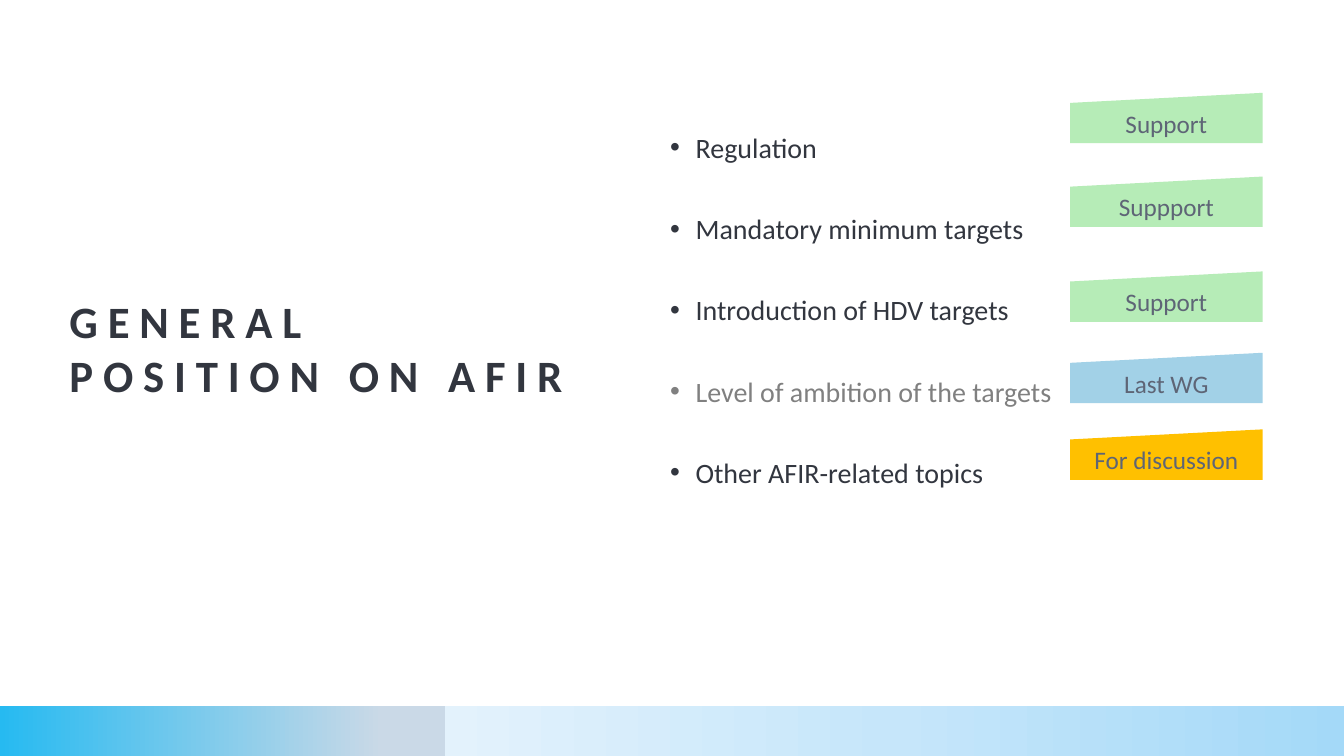
from lxml.etree import SubElement
from pptx import Presentation
from pptx.dml.color import RGBColor
from pptx.enum.shapes import MSO_SHAPE
from pptx.enum.text import MSO_ANCHOR, PP_ALIGN
from pptx.oxml.ns import qn
from pptx.util import Cm, Pt

COLORS = {
    "ink": "32363F", "muted": "808080", "label": "5E6576",
    "green": "B6ECB7", "blue": "A2D1E7", "amber": "FFC000",
    "cyan": "26BAF1", "steel": "CAD9E7",
    "ice": "E3F2FC", "pale": "C6E6FA", "sky": "A4D9F8",
}


class PositionSlide:
    """Draws the parts of the slide in one shared style."""

    font_name = "Calibri"

    def __init__(self, slide):
        self.slide = slide

    def style(self, paragraph, size, color, bold=False):
        font = paragraph.font
        font.name, font.size, font.bold = self.font_name, Pt(size), bold
        font.color.rgb = RGBColor.from_string(COLORS[color])

    def shape(self, preset, left, top, width, height):
        shape = self.slide.shapes.add_shape(preset, Cm(left), Cm(top), Cm(width), Cm(height))
        shape.shadow.inherit = False
        shape.line.fill.background()
        return shape

    def text_frame(self, left, top, width, height, anchor):
        frame = self.slide.shapes.add_textbox(Cm(left), Cm(top), Cm(width), Cm(height)).text_frame
        frame.word_wrap = True
        frame.vertical_anchor = anchor
        frame.margin_left = frame.margin_right = frame.margin_top = frame.margin_bottom = 0
        return frame

    def band(self, left, width, stops):
        band = self.shape(MSO_SHAPE.RECTANGLE, left, 17.8, width, 1.27)
        band.fill.gradient()
        band.fill.gradient_angle = 0
        stop_list = next(band._element.iter(qn("a:gsLst")))
        for stop in list(stop_list):
            stop_list.remove(stop)
        for percent, color in stops:
            stop = SubElement(stop_list, qn("a:gs"), pos=str(percent * 1000))
            SubElement(stop, qn("a:srgbClr"), val=COLORS[color])

    def title(self, text):
        heading = self.text_frame(1.75, 4.85, 12.75, 5.26, MSO_ANCHOR.BOTTOM).paragraphs[0]
        run = heading.add_run()
        run.text = text
        run._r.get_or_add_rPr().set("spc", "700")
        self.style(heading, 32, "ink", bold=True)

    def topics(self, topics):
        frame = self.text_frame(16.89, 2.44, 14.94, 13.54, MSO_ANCHOR.TOP)
        for index, (text, color) in enumerate(topics):
            topic = frame.add_paragraph() if index else frame.paragraphs[0]
            topic.text = text
            topic.line_spacing = 2.0
            topic.space_before = Pt(10)
            properties = topic._p.get_or_add_pPr()
            properties.set("marL", str(Cm(0.64)))
            properties.set("indent", str(-Cm(0.64)))
            SubElement(properties, qn("a:buFont"), typeface="Arial")
            SubElement(properties, qn("a:buChar"), char="•")
            self.style(topic, 20, color)

    def status(self, text, top, color):
        badge = self.shape(MSO_SHAPE.FLOWCHART_MANUAL_INPUT, 26.97, top, 4.85, 1.27)
        badge.fill.solid()
        badge.fill.fore_color.rgb = RGBColor.from_string(COLORS[color])
        frame = badge.text_frame
        frame.word_wrap = True
        frame.vertical_anchor = MSO_ANCHOR.MIDDLE
        label = frame.paragraphs[0]
        label.text = text
        label.alignment = PP_ALIGN.CENTER
        self.style(label, 18, "label")


def main():
    presentation = Presentation()
    presentation.slide_width, presentation.slide_height = Cm(33.87), Cm(19.05)
    page = PositionSlide(presentation.slides.add_slide(presentation.slide_layouts[6]))

    page.band(0, 11.22, [(0, "cyan"), (86, "steel"), (100, "steel")])
    page.band(11.22, 22.65, [(0, "ice"), (50, "pale"), (100, "sky")])
    page.title("GENERAL POSITION ON AFIR")
    page.topics([
        ("Regulation", "ink"),
        ("Mandatory minimum targets", "ink"),
        ("Introduction of HDV targets", "ink"),
        ("Level of ambition of the targets", "muted"),
        ("Other AFIR-related topics", "ink"),
    ])
    for text, top, color in [
        ("Support", 2.34, "green"),
        ("Suppport", 4.45, "green"),
        ("Support", 6.84, "green"),
        ("Last WG", 8.89, "blue"),
        ("For discussion", 10.82, "amber"),
    ]:
        page.status(text, top, color)

    presentation.save("out.pptx")


if __name__ == "__main__":
    main()
